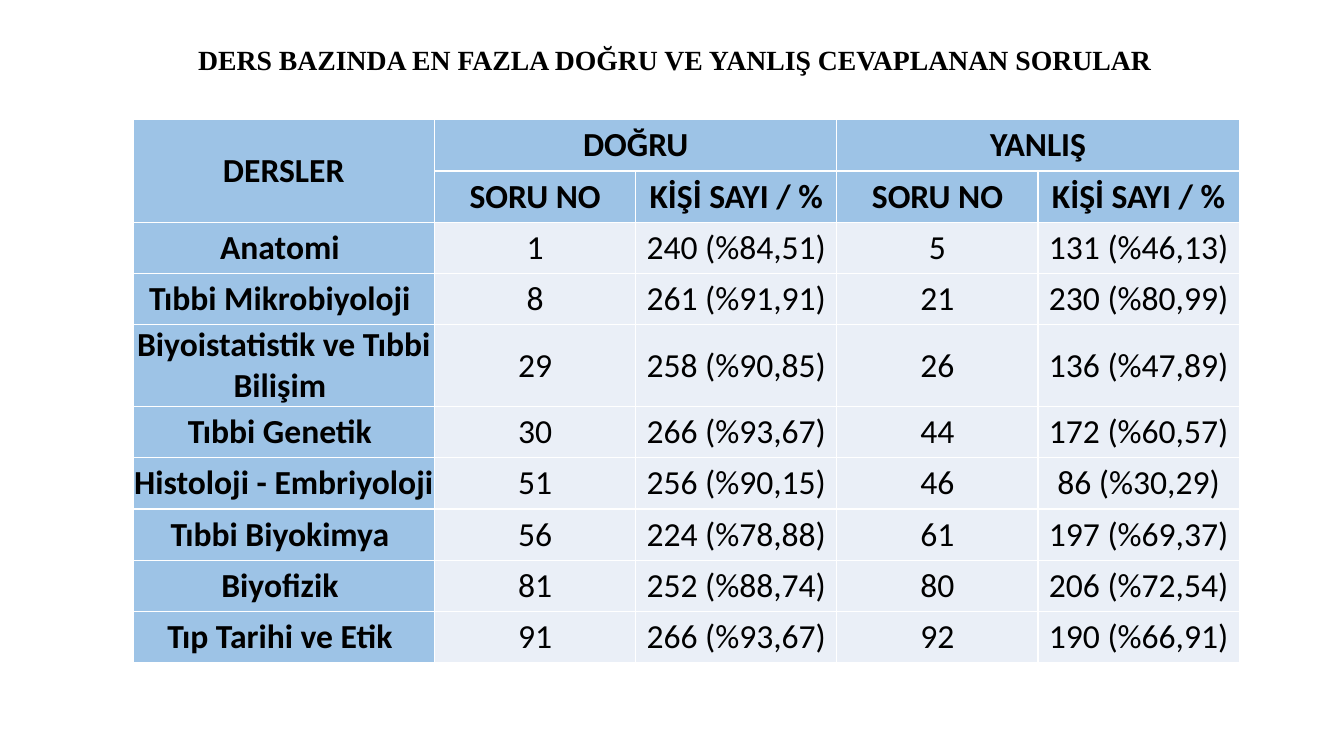
from pptx import Presentation
from pptx.dml.color import RGBColor
from pptx.enum.text import MSO_ANCHOR, MSO_AUTO_SIZE, PP_ALIGN
from pptx.util import Cm, Pt

TITLE = "DERS BAZINDA EN FAZLA DOĞRU VE YANLIŞ CEVAPLANAN SORULAR "
BLUE, PALE, BLACK = "9DC3E6", "EAEFF7", "000000"
WIDTHS = [7.6] + [5.07] * 4
ROW = 1.29
HEADS = [
    ("DERSLER", "DOĞRU", "", "YANLIŞ", ""),
    ("", "SORU NO", "KİŞİ SAYI / %", "SORU NO", "KİŞİ SAYI / %"),
]
LESSONS = [
    ("Anatomi ", "1", "240 (%84,51)", "5", "131 (%46,13)"),
    ("Tıbbi Mikrobiyoloji ", "8", "261 (%91,91)", "21", "230 (%80,99)"),
    ("Biyoistatistik ve Tıbbi Bilişim ", "29", "258 (%90,85)", "26", "136 (%47,89)"),
    ("Tıbbi Genetik ", "30", "266 (%93,67)", "44", "172 (%60,57)"),
    ("Histoloji - Embriyoloji ", "51", "256 (%90,15)", "46", "86 (%30,29)"),
    ("Tıbbi Biyokimya ", "56", "224 (%78,88)", "61", "197 (%69,37)"),
    ("Biyofizik ", "81", "252 (%88,74)", "80", "206 (%72,54)"),
    ("Tıp Tarihi ve Etik ", "91", "266 (%93,67)", "92", "190 (%66,91)"),
]


def paint(fmt, color):
    """Give a fill or a font a solid colour."""
    if hasattr(fmt, "solid"):
        fmt.solid()
        fmt.fore_color.rgb = RGBColor.from_string(color)
    else:
        fmt.color.rgb = RGBColor.from_string(color)


def style(para, name, size, bold):
    para.alignment = PP_ALIGN.CENTER
    for run in para.runs:
        font = run.font
        font.name, font.size, font.bold = name, Pt(size), bold
        paint(font, BLACK)


def set_title(slide):
    title = slide.shapes.title
    title.left, title.top = Cm(2.34), Cm(1.83)
    title.width, title.height = Cm(29.49), Cm(1.19)
    frame = title.text_frame
    frame.text = TITLE
    frame.word_wrap = True
    frame.auto_size = MSO_AUTO_SIZE.NONE
    frame.vertical_anchor = MSO_ANCHOR.BOTTOM
    frame.margin_top, frame.margin_bottom = Cm(0), Cm(1.09)
    para = frame.paragraphs[0]
    para.line_spacing = 0.9
    style(para, "Times New Roman", 19.8, True)


def set_cell(cell, text, head):
    cell.margin_left = cell.margin_right = Cm(0)
    cell.margin_top = cell.margin_bottom = Cm(0)
    cell.vertical_anchor = MSO_ANCHOR.MIDDLE
    paint(cell.fill, BLUE if head else PALE)
    cell.text_frame.text = text
    style(cell.text_frame.paragraphs[0], "Calibri", 24, head)


def add_grid(slide):
    rows = HEADS + LESSONS
    frame = slide.shapes.add_table(
        len(rows), len(WIDTHS), Cm(3.35), Cm(3.02), Cm(sum(WIDTHS)), Cm(ROW * len(rows))
    )
    table = frame.table
    table.first_row = table.horz_banding = False
    for col, width in zip(table.columns, WIDTHS):
        col.width = Cm(width)
    for r, texts in enumerate(rows):
        table.rows[r].height = Cm(ROW)
        for c, text in enumerate(texts):
            set_cell(table.cell(r, c), text, r < len(HEADS) or c == 0)
    table.cell(0, 0).merge(table.cell(1, 0))
    for c in (1, 3):
        table.cell(0, c).merge(table.cell(0, c + 1))
    frame.height = Cm(13.64)


def main():
    deck = Presentation()
    deck.slide_width, deck.slide_height = Cm(33.87), Cm(19.05)
    slide = deck.slides.add_slide(deck.slide_layouts[5])
    set_title(slide)
    add_grid(slide)
    deck.save("out.pptx")


if __name__ == "__main__":
    main()
